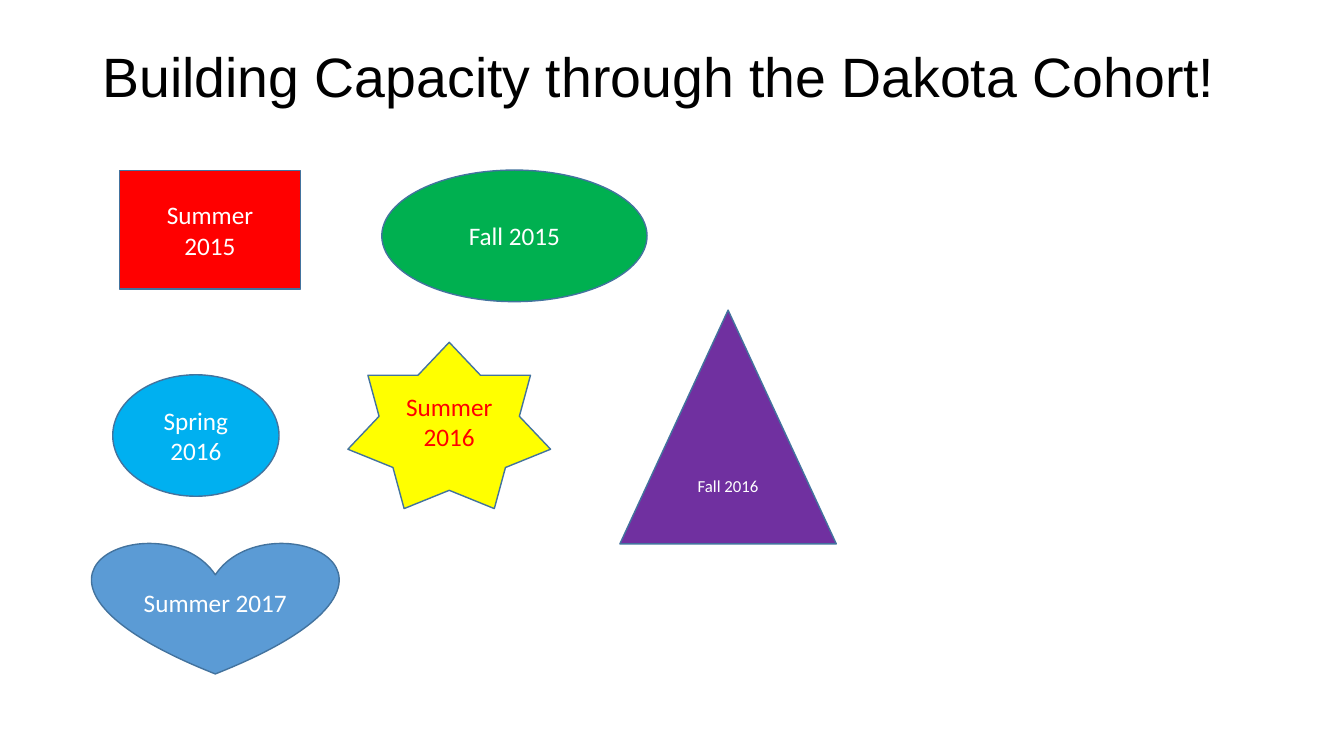
"""Build the Dakota Cohort slide with one coloured shape per term."""
from pptx import Presentation
from pptx.dml.color import RGBColor
from pptx.enum import shapes, text
from pptx.util import Pt

BLACK = RGBColor(0x00, 0x00, 0x00)
WHITE = RGBColor(0xFF, 0xFF, 0xFF)
RED = RGBColor(0xFF, 0x00, 0x00)
GREEN = RGBColor(0x00, 0xB0, 0x50)
SKY = RGBColor(0x00, 0xB0, 0xF0)
YELLOW = RGBColor(0xFF, 0xFF, 0x00)
PURPLE = RGBColor(0x70, 0x30, 0xA0)
BLUE = RGBColor(0x5B, 0x9B, 0xD5)
OUTLINE = RGBColor(0x43, 0x73, 0x9E)

KIND = shapes.MSO_SHAPE
TITLE = "Building Capacity through the Dakota Cohort!"
TERMS = [
    (["Summer", "2015"], KIND.RECTANGLE, (85.5, 121.9, 129, 84.5), RED, WHITE, 18),
    (["Fall 2015"], KIND.OVAL, (272.7, 121.5, 189.5, 94), GREEN, WHITE, 18),
    (["Spring 2016"], KIND.OVAL, (80.5, 267.7, 118.8, 86.8), SKY, WHITE, 18),
    (["Summer 2016"], KIND.STAR_7_POINT, (248.5, 244.5, 144.8, 118.8), YELLOW, RED, 18),
    (["Fall 2016"], KIND.ISOSCELES_TRIANGLE, (442.8, 221.5, 154.6, 167), PURPLE, WHITE, 12),
    (["Summer 2017"], KIND.HEART, (66, 387, 175.7, 94.4), BLUE, WHITE, 18),
]


def add_run(p, words, font, size, color):
    r = p.add_run()
    r.text = words
    r.font.name = font
    r.font.size = Pt(size)
    r.font.color.rgb = color


def add_title(s):
    sp = s.shapes.title
    sp.left, sp.top, sp.width, sp.height = map(Pt, (66, 8.6, 828, 96.5))
    tf = sp.text_frame
    tf.auto_size = text.MSO_AUTO_SIZE.NONE
    tf.vertical_anchor = text.MSO_ANCHOR.MIDDLE
    p = tf.paragraphs[0]
    p.alignment = text.PP_ALIGN.LEFT
    p.line_spacing = 0.9
    add_run(p, TITLE, "Arial", 39.6, BLACK)


def add_term(s, lines, kind, box, fill, color, size):
    sp = s.shapes.add_shape(kind, *map(Pt, box))
    sp.shadow.inherit = False
    sp.fill.solid()
    sp.fill.fore_color.rgb = fill
    sp.line.color.rgb = OUTLINE
    sp.line.width = Pt(1)
    tf = sp.text_frame
    tf.word_wrap = True
    tf.vertical_anchor = text.MSO_ANCHOR.MIDDLE
    for i, words in enumerate(lines):
        p = tf.add_paragraph() if i else tf.paragraphs[0]
        p.alignment = text.PP_ALIGN.CENTER
        add_run(p, words, "Calibri", size, color)


def main():
    prs = Presentation()
    prs.slide_width, prs.slide_height = Pt(960), Pt(540)
    s = prs.slides.add_slide(prs.slide_layouts[5])
    add_title(s)
    for term in TERMS:
        add_term(s, *term)
    prs.save("out.pptx")


if __name__ == "__main__":
    main()
